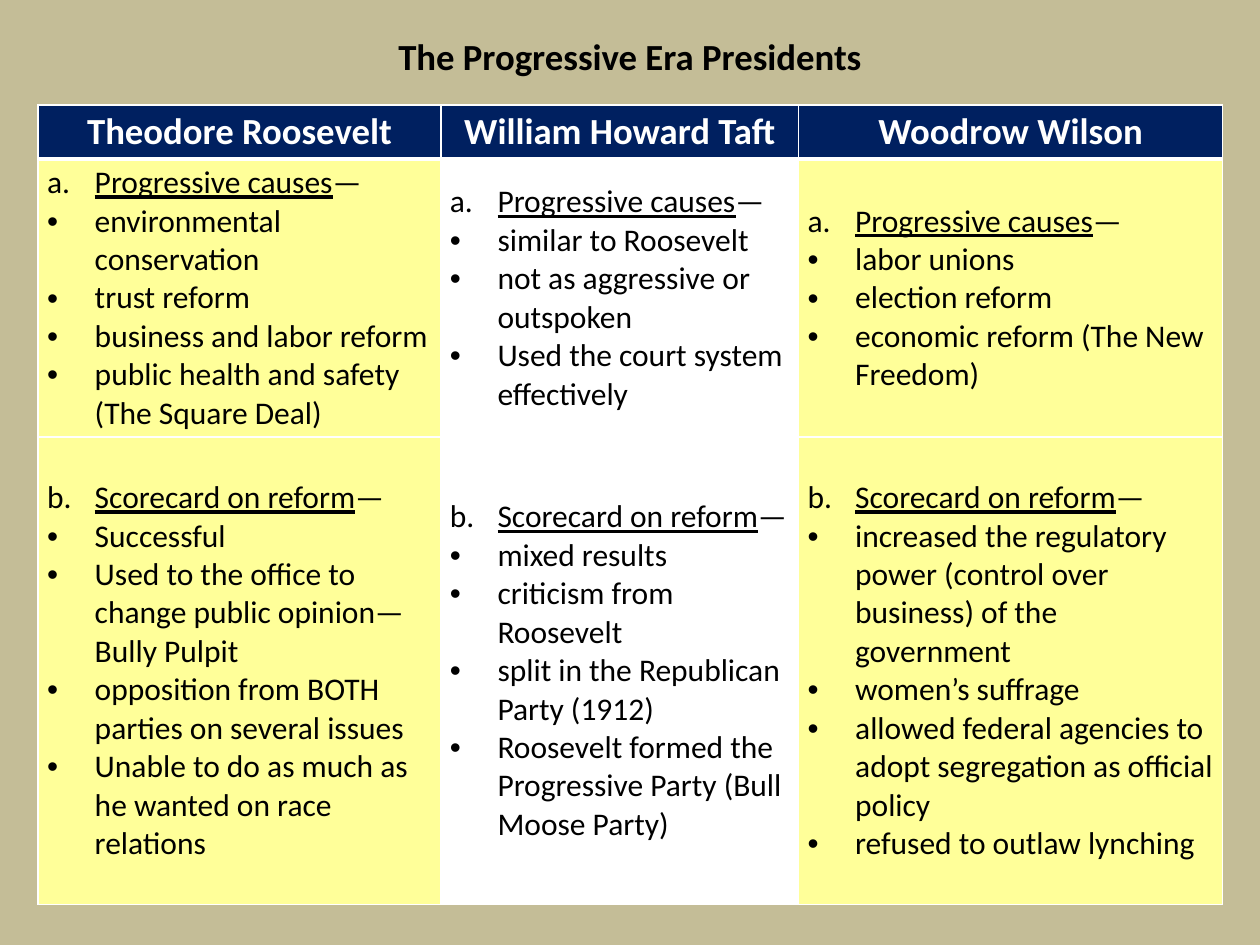
from dataclasses import dataclass

from lxml.etree import SubElement
from pptx import Presentation
from pptx.dml.color import RGBColor
from pptx.enum.text import MSO_ANCHOR, PP_ALIGN
from pptx.oxml.ns import qn
from pptx.util import Cm, Pt


@dataclass(frozen=True)
class Theme:
    font: str = "Calibri"
    heading_size: int = 21
    body_size: int = 18
    background: str = "C4BD97"
    header: str = "002060"
    highlight: str = "FFFF99"
    white: str = "FFFFFF"
    black: str = "000000"
    thin_border: int = 1
    thick_border: int = 3


THEME = Theme()
COLUMN_WIDTHS = (8.12, 7.21, 8.55)
ROW_HEIGHTS = (0.64, 5.08, 9.42)
COLUMN_FILLS = (THEME.highlight, THEME.white, THEME.highlight)
SECTIONS = ("Progressive causes", "Scorecard on reform")
PRESIDENTS = {
    "Theodore Roosevelt": (
        (
            "environmental conservation",
            "trust reform",
            "business and labor reform",
            "public health and safety (The Square Deal)",
        ),
        (
            "Successful",
            "Used to the office to change public opinion—Bully Pulpit",
            "opposition from BOTH parties on several issues",
            "Unable to do as much as he wanted on race relations",
        ),
    ),
    "William Howard Taft": (
        (
            "similar to Roosevelt",
            "not as aggressive or outspoken",
            "Used the court system effectively",
        ),
        (
            "mixed results",
            "criticism from Roosevelt",
            "split in the Republican Party (1912)",
            "Roosevelt formed the Progressive Party (Bull Moose Party)",
        ),
    ),
    "Woodrow Wilson": (
        (
            "labor unions",
            "election reform",
            "economic reform (The New Freedom)",
        ),
        (
            "increased the regulatory power (control over business) of the government",
            "women’s suffrage",
            "allowed federal agencies to adopt segregation as official policy",
            "refused to outlaw lynching",
        ),
    ),
}


def add_text(paragraph, text, size=THEME.body_size, color=THEME.black,
             bold=False, underline=False, align=PP_ALIGN.LEFT):
    paragraph.alignment = align
    run = paragraph.add_run()
    run.text = text
    run.font.name = THEME.font
    run.font.size = Pt(size)
    run.font.bold = bold
    run.font.underline = underline
    run.font.color.rgb = RGBColor.from_string(color)


def add_heading(cell, text, color):
    add_text(cell.text_frame.paragraphs[0], text, size=THEME.heading_size,
             color=color, bold=True, align=PP_ALIGN.CENTER)


def set_marker(paragraph, letter_number=None):
    properties = paragraph._p.get_or_add_pPr()
    properties.set("marL", str(Cm(0.96)))
    properties.set("indent", str(Cm(-0.96)))
    if letter_number:
        SubElement(properties, qn("a:buFont"), typeface="+mj-lt")
        SubElement(properties, qn("a:buAutoNum"), type="alphaLcPeriod",
                   startAt=str(letter_number))
    else:
        SubElement(properties, qn("a:buFont"), typeface="Arial")
        SubElement(properties, qn("a:buChar"), char="•")


def set_borders(cell, sides, top, bottom):
    properties = cell._tc.get_or_add_tcPr()
    for side, width in (("L", sides), ("R", sides), ("T", top), ("B", bottom)):
        line = SubElement(properties, qn(f"a:ln{side}"), w=str(Pt(width)))
        if width:
            fill = SubElement(line, qn("a:solidFill"))
            SubElement(fill, qn("a:srgbClr"), val=THEME.white)
        else:
            SubElement(line, qn("a:noFill"))


def format_cell(cell, color=None, sides=THEME.thin_border,
                top=THEME.thin_border, bottom=THEME.thin_border,
                anchor=MSO_ANCHOR.TOP):
    set_borders(cell, sides, top, bottom)
    if color:
        cell.fill.solid()
        cell.fill.fore_color.rgb = RGBColor.from_string(color)
    else:
        cell.fill.background()
    cell.margin_left = cell.margin_right = Cm(0.18)
    cell.margin_top = cell.margin_bottom = Cm(0.09)
    cell.vertical_anchor = anchor


def fill_section(cell, number, points):
    heading = cell.text_frame.paragraphs[0]
    add_text(heading, SECTIONS[number - 1], underline=True)
    add_text(heading, "—")
    set_marker(heading, letter_number=number)
    for point in points:
        item = cell.text_frame.add_paragraph()
        add_text(item, point)
        set_marker(item)


def add_grid(slide, left, top, height, widths, heights):
    frame = slide.shapes.add_table(
        len(heights), len(widths), Cm(left), Cm(top),
        Cm(sum(widths)), Cm(height))
    for column, width in zip(frame.table.columns, widths):
        column.width = Cm(width)
    for row, row_height in zip(frame.table.rows, heights):
        row.height = Cm(row_height)
    frame.height = Cm(height)
    frame.table.horz_banding = False
    return frame.table


def add_title(slide, text):
    title = add_grid(slide, 6.35, 0.63, 1.07, (12.7,), (1.07,))
    title.first_row = False
    format_cell(title.cell(0, 0), sides=0, top=0, bottom=0)
    add_heading(title.cell(0, 0), text, THEME.black)


def add_presidents(slide):
    comparison = add_grid(slide, 0.77, 2.12, 16.03, COLUMN_WIDTHS, ROW_HEIGHTS)
    for index, (president, sections) in enumerate(PRESIDENTS.items()):
        header = comparison.cell(0, index)
        format_cell(header, THEME.header, bottom=THEME.thick_border)
        add_heading(header, president, THEME.white)
        for number, points in enumerate(sections, start=1):
            section = comparison.cell(number, index)
            top = THEME.thick_border if number == 1 else THEME.thin_border
            format_cell(section, COLUMN_FILLS[index], top=top,
                        anchor=MSO_ANCHOR.MIDDLE)
            fill_section(section, number, points)


def main():
    presentation = Presentation()
    presentation.slide_width, presentation.slide_height = Cm(25.4), Cm(19.05)
    slide = presentation.slides.add_slide(presentation.slide_layouts[6])
    slide.background.fill.solid()
    slide.background.fill.fore_color.rgb = RGBColor.from_string(THEME.background)
    add_presidents(slide)
    add_title(slide, "The Progressive Era Presidents")
    presentation.save("out.pptx")


if __name__ == "__main__":
    main()
